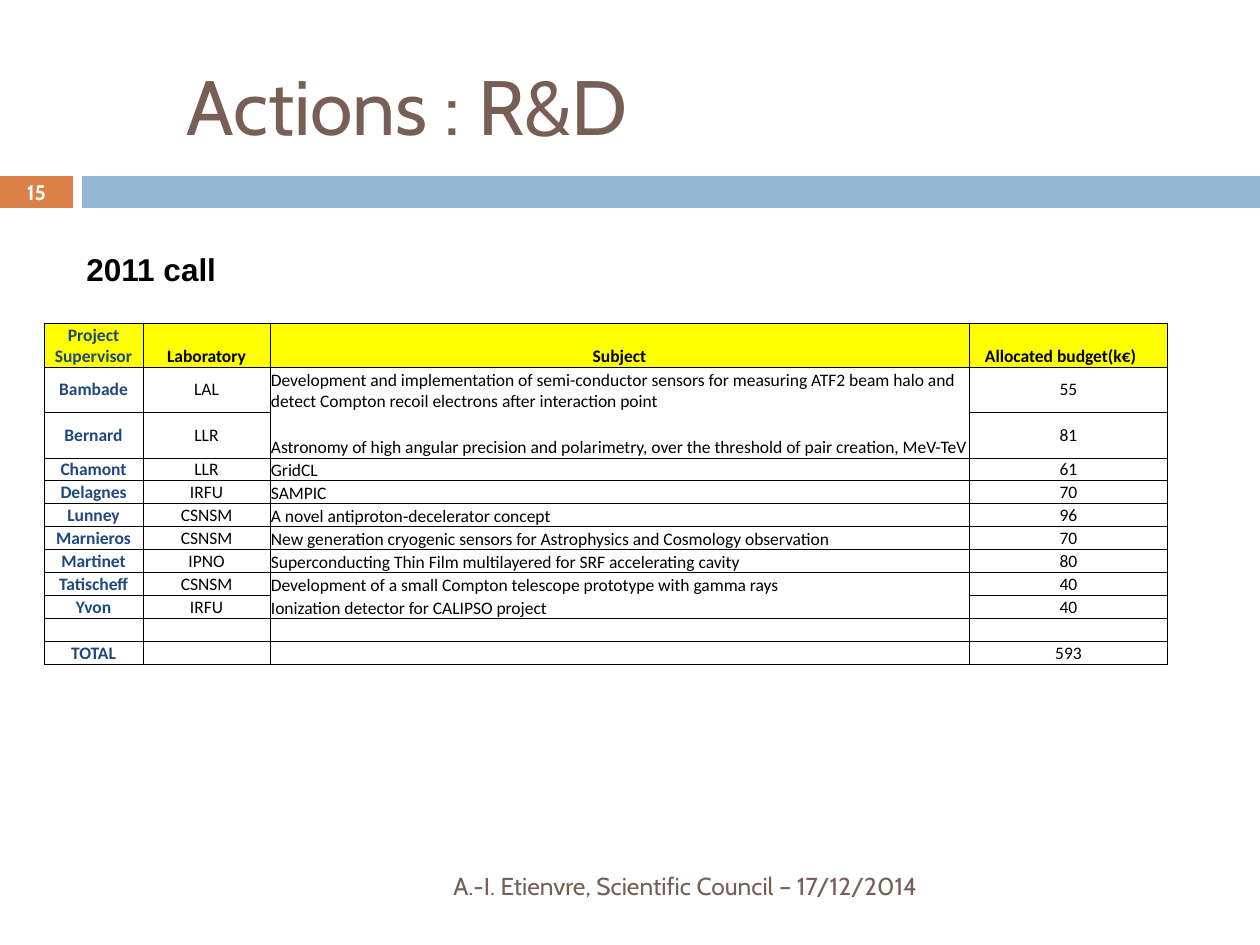
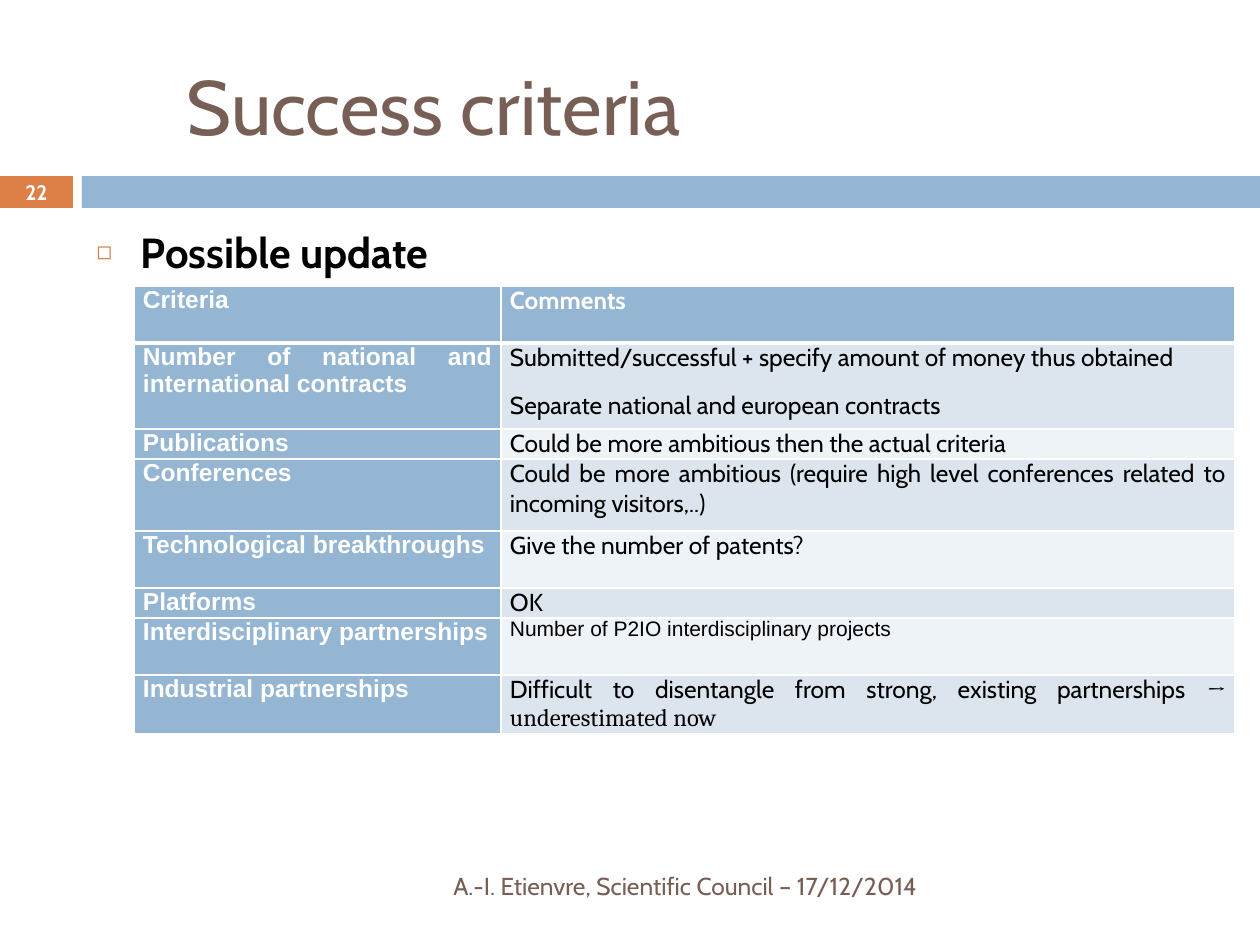
"""Build two slides on R&D actions and success criteria."""
from lxml import etree
from pptx import Presentation
from pptx.dml.color import RGBColor
from pptx.enum.shapes import MSO_SHAPE
from pptx.enum.text import MSO_ANCHOR, MSO_AUTO_SIZE, PP_ALIGN
from pptx.oxml.ns import qn
from pptx.util import Pt

RECT = MSO_SHAPE.RECTANGLE
TOP, MIDDLE, BOTTOM = MSO_ANCHOR.TOP, MSO_ANCHOR.MIDDLE, MSO_ANCHOR.BOTTOM
LEFT, CENTER, RIGHT = PP_ALIGN.LEFT, PP_ALIGN.CENTER, PP_ALIGN.RIGHT
JUSTIFY = PP_ALIGN.JUSTIFY
NO_FIT = MSO_AUTO_SIZE.NONE

BLACK = RGBColor(0x00, 0x00, 0x00)
WHITE = RGBColor(0xFF, 0xFF, 0xFF)
BROWN = RGBColor(0x77, 0x5F, 0x55)
ORANGE = RGBColor(0xDD, 0x80, 0x47)
BLUE = RGBColor(0x94, 0xB6, 0xD2)
NAVY = RGBColor(0x1F, 0x49, 0x7D)
YELLOW = RGBColor(0xFF, 0xFF, 0x00)
BAND_DARK = RGBColor(0xDC, 0xE5, 0xEE)
BAND_LIGHT = RGBColor(0xEE, 0xF3, 0xF7)

FOOTER = "A.-I. Etienvre, Scientific Council – 17/12/2014"

PROJECT_HEAD = ("Project Supervisor", "Laboratory", "Subject", "Allocated budget(k€)")
PROJECTS = [
    ("Bambade", "LAL", "Development and implementation of semi-conductor sensors for measuring "
     "ATF2 beam halo and detect Compton recoil electrons after interaction point", "55"),
    ("Bernard", "LLR", "Astronomy of high angular precision and polarimetry, over the "
     "threshold of pair creation, MeV-TeV", "81"),
    ("Chamont", "LLR", "GridCL", "61"),
    ("Delagnes", "IRFU", "SAMPIC", "70"),
    ("Lunney", "CSNSM", "A novel antiproton‐decelerator concept", "96"),
    ("Marnieros", "CSNSM", "New generation cryogenic sensors for Astrophysics and "
     "Cosmology observation", "70"),
    ("Martinet", "IPNO", "Superconducting Thin Film multilayered for SRF accelerating cavity", "80"),
    ("Tatischeff", "CSNSM", "Development of a small Compton telescope prototype with gamma rays", "40"),
    ("Yvon", "IRFU", "Ionization detector for CALIPSO project", "40"),
    ("", "", "", ""),
    ("TOTAL", "", "", "593"),
]
PROJECT_COLS = (99, 127, 699, 199)
PROJECT_ROWS = (44, 45, 46) + (23,) * 9
OPEN_BELOW = ("Bambade", "Tatischeff")
OPEN_ABOVE = ("Bernard", "Yvon")

CRITERIA = [
    ("Number of national and international contracts",
     ["Submitted/successful + specify amount of money thus obtained",
      "Separate national and european contracts"]),
    ("Publications", ["Could be more ambitious then the actual criteria"]),
    ("Conferences", ["Could be more ambitious (require high level conferences related to "
                     "incoming visitors,..)"]),
    ("Technological breakthroughs", ["Give the number of patents?"]),
    ("Platforms", ["OK"]),
    ("Interdisciplinary partnerships", ["Number of P2IO interdisciplinary projects"]),
    ("Industrial partnerships",
     ["Difficult to disentangle from strong, existing partnerships → underestimated now"]),
]
SMALL_ROW = "Interdisciplinary partnerships"
CRITERIA_COLS = (367, 734)
CRITERIA_ROWS = (57, 86, 30, 72, 57, 30, 57, 57)


def px(n):
    return round(n * 914400 / 126)


def place(shape, box):
    shape.left, shape.top, shape.width, shape.height = map(px, box)


def add_run(p, text, font, size, color, bold=False):
    r = p.add_run()
    r.text = text
    r.font.name, r.font.size, r.font.bold = font, Pt(size), bold
    r.font.color.rgb = color


def add_label(s, box, text, style, align=LEFT, anchor=TOP, inset=None, wrap=True):
    tb = s.shapes.add_textbox(*map(px, box))
    tf = tb.text_frame
    tf.word_wrap, tf.vertical_anchor = wrap, anchor
    if inset is not None:
        tf.margin_left = tf.margin_right = tf.margin_top = tf.margin_bottom = px(inset)
    p = tf.paragraphs[0]
    p.alignment = align
    add_run(p, text, *style)


def add_band(s, box, color):
    sp = s.shapes.add_shape(RECT, *map(px, box))
    sp.shadow.inherit = False
    sp.fill.solid()
    sp.fill.fore_color.rgb = color
    sp.line.fill.background()


def add_slide(prs, layout, title, number):
    s = prs.slides.add_slide(prs.slide_layouts[layout])
    add_band(s, (0, 176, 73, 32), ORANGE)
    add_band(s, (82, 176, 1178, 32), BLUE)
    add_label(s, (190, 861, 740, 50), FOOTER, ("Cabin", 14, BROWN), RIGHT, MIDDLE)
    add_label(s, (0, 175, 73, 34), number, ("Cabin", 12, WHITE, True), CENTER, MIDDLE, 0)
    place(s.shapes.title, (174, 37, 1106, 136))
    tf = s.shapes.title.text_frame
    tf.auto_size, tf.vertical_anchor = NO_FIT, MIDDLE
    p = tf.paragraphs[0]
    p.alignment = LEFT
    add_run(p, title, "Cabin", 44, BROWN)
    return s


def add_grid(s, left, top, cols, rows):
    box = (left, top, sum(cols), sum(rows))
    table = s.shapes.add_table(len(rows), len(cols), *map(px, box)).table
    table.first_row = table.horz_banding = False
    for col, width in zip(table.columns, cols):
        col.width = px(width)
    for row, height in zip(table.rows, rows):
        row.height = px(height)
    return table


def format_cell(cell, fill, margins, anchor, line, widths):
    cell.fill.solid()
    cell.fill.fore_color.rgb = fill
    cell.margin_left, cell.margin_top, cell.margin_right, cell.margin_bottom = map(px, margins)
    cell.vertical_anchor = anchor
    tc_pr = cell._tc.get_or_add_tcPr()
    for i, (side, width) in enumerate(zip("LRTB", widths)):
        ln = etree.Element(qn(f"a:ln{side}"), w=str(Pt(width)))
        if width:
            solid = etree.SubElement(ln, qn("a:solidFill"))
            etree.SubElement(solid, qn("a:srgbClr"), val=str(line))
        else:
            etree.SubElement(ln, qn("a:noFill"))
        tc_pr.insert(i, ln)


def add_bullet(p, char, color, percent, indent):
    p_pr = p._p.get_or_add_pPr()
    p_pr.set("marL", str(px(indent)))
    p_pr.set("indent", str(-px(indent)))
    clr = etree.SubElement(p_pr, qn("a:buClr"))
    etree.SubElement(clr, qn("a:srgbClr"), val=str(color))
    etree.SubElement(p_pr, qn("a:buSzPct"), val=str(percent * 1000))
    etree.SubElement(p_pr, qn("a:buChar"), char=char)


def fill_projects(table):
    for i, row in enumerate([PROJECT_HEAD] + PROJECTS):
        for j, text in enumerate(row):
            head, subject = i == 0, j == 2
            cell = table.cell(i, j)
            above = 0 if subject and row[0] in OPEN_ABOVE else 0.5
            below = 0 if subject and row[0] in OPEN_BELOW else 0.5
            margins = (1, 1, 17 if head and j == 3 else 1, 0)
            format_cell(cell, YELLOW if head else WHITE, margins,
                        BOTTOM if head or subject else MIDDLE, BLACK, (0.5, 0.5, above, below))
            p = cell.text_frame.paragraphs[0]
            p.alignment = LEFT if subject and not head else CENTER
            if text:
                add_run(p, text, "Calibri", 10, BLACK if j else NAVY, head or j == 0)
            else:
                etree.SubElement(p._p, qn("a:endParaRPr"), sz="1000")


def fill_criteria(table):
    for i, (name, comments) in enumerate([("Criteria", ["Comments"])] + CRITERIA):
        band = BAND_DARK if i % 2 else BAND_LIGHT
        widths = (1, 1, 3 if i == 1 else 1, 1 if i else 3)
        for j, lines in enumerate(([name], comments)):
            cell = table.cell(i, j)
            strong = i == 0 or j == 0
            small = j == 1 and name == SMALL_ROW
            format_cell(cell, BLUE if strong else band, (9, 0, 9, 0), TOP, WHITE, widths)
            font = "Cabin" if j and not small else "Arial"
            style = (12 if small else 14, WHITE if strong else BLACK, strong)
            tf = cell.text_frame
            for k, text in enumerate(lines):
                p = tf.add_paragraph() if k else tf.paragraphs[0]
                p.alignment = LEFT if small else JUSTIFY
                p.space_after = Pt(0 if small else 10)
                before, arrow, after = text.partition("→")
                add_run(p, before, font, *style)
                if arrow:
                    add_run(p, arrow + after, "Cambria", *style)


def main():
    prs = Presentation()
    prs.slide_width, prs.slide_height = px(1260), px(945)

    s = add_slide(prs, 5, "Actions : R&D", "15")
    fill_projects(add_grid(s, 44, 323, PROJECT_COLS, PROJECT_ROWS))
    add_label(s, (74, 244, 156, 50), "2011 call", ("Arial", 18, BLACK, True), wrap=False)

    s = add_slide(prs, 1, "Success criteria", "22")
    body = s.placeholders[1]
    place(body, (84, 220, 1124, 620))
    tf = body.text_frame
    tf.auto_size = NO_FIT
    p = tf.paragraphs[0]
    add_bullet(p, "◻", ORANGE, 60, 44)
    p.space_before = Pt(0)
    add_run(p, "Possible update", "Cabin", 24, BLACK, True)
    fill_criteria(add_grid(s, 134, 286, CRITERIA_COLS, CRITERIA_ROWS))

    prs.save("out.pptx")


if __name__ == "__main__":
    main()
